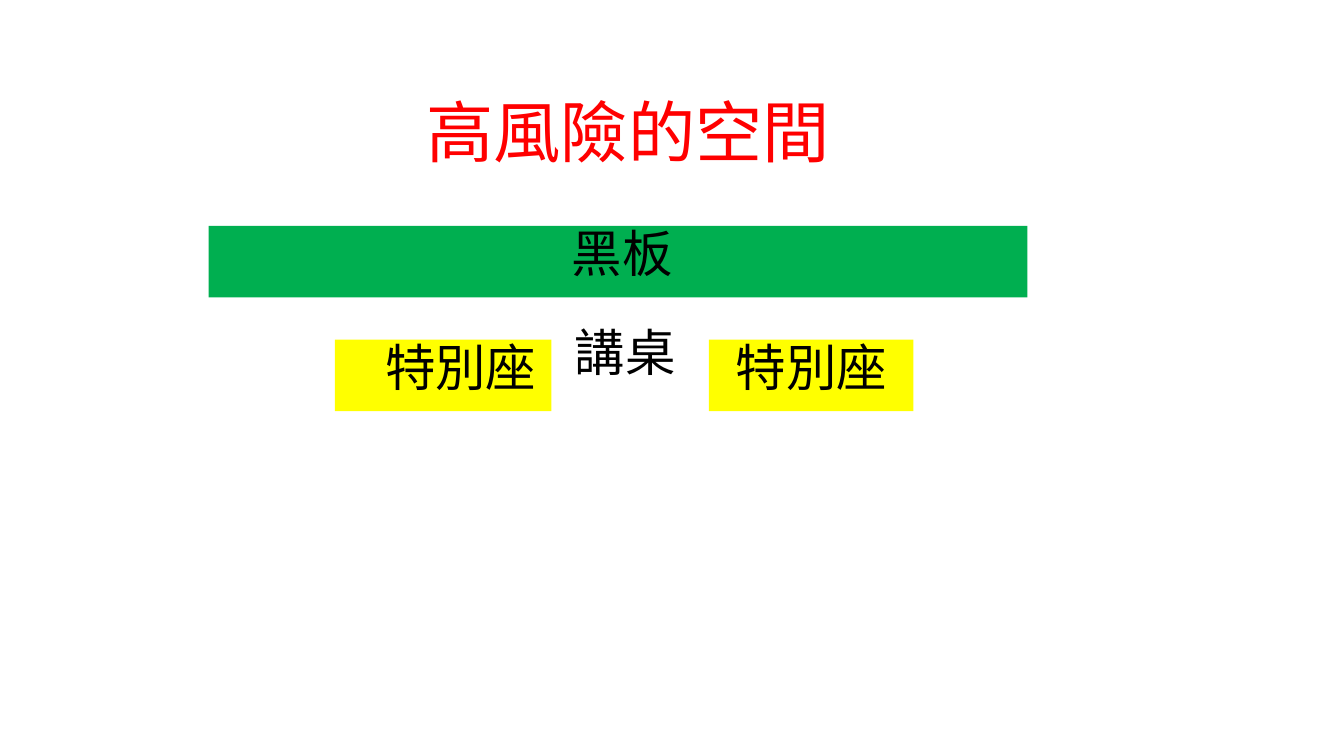
from dataclasses import dataclass
from typing import Optional

from pptx import Presentation
from pptx.dml.color import RGBColor
from pptx.enum import shapes, text
from pptx.oxml import ns
from pptx import util as u
from lxml import etree


@dataclass(frozen=True)
class Theme:
    font: str = "Noto Sans CJK JP"
    title_size: int = 48
    label_size: int = 36
    line_spacing: float = 0.9
    ink: str = "000000"
    warning: str = "FF0000"
    board: str = "00AF50"
    seat: str = "FFFF00"


@dataclass(frozen=True)
class Label:
    wording: str
    left: float
    top: float
    width: float
    height: float
    indent: float
    inset: float = 0.01
    space_before: float = 1
    fill: Optional[str] = None
    centred: bool = False
    tracking: int = 0


THEME = Theme()
SEAT_TOP, BAR_HEIGHT = 3.37, 0.71
BAR_INSET, BAR_SPACE = 0.03, 2.2

HEADING = Label("高風險的空間", 4.22, 0.98, 4.03, 0.83, 0.01)
CLASSROOM = [
    Label("黑板", 2.07, 2.24, 8.12, BAR_HEIGHT, 0.08, BAR_INSET, BAR_SPACE,
          THEME.board, centred=True, tracking=-10),
    Label("講桌", 5.69, 3.24, 1.03, 0.63, 0.01),
    Label("特別座", 3.32, SEAT_TOP, 2.15, BAR_HEIGHT, 0.5, BAR_INSET, BAR_SPACE, THEME.seat),
    Label("特別座", 7.03, SEAT_TOP, 2.03, BAR_HEIGHT, 0.27, BAR_INSET, BAR_SPACE, THEME.seat),
]


def write_label(frame, label: Label, size: int, colour: str) -> None:
    frame.word_wrap = True
    frame.auto_size = text.MSO_AUTO_SIZE.SHAPE_TO_FIT_TEXT
    frame.vertical_anchor = text.MSO_ANCHOR.TOP
    frame.margin_left = frame.margin_right = frame.margin_bottom = 0
    frame.margin_top = u.Inches(label.inset)

    paragraph = frame.paragraphs[0]
    paragraph.alignment = text.PP_ALIGN.CENTER if label.centred else text.PP_ALIGN.LEFT
    paragraph.space_before = u.Pt(label.space_before)
    paragraph.line_spacing = THEME.line_spacing
    properties = paragraph._p.get_or_add_pPr()
    properties.set("marL", str(u.Inches(label.indent)))
    properties.set("indent", "0")

    run = paragraph.add_run()
    run.text = label.wording
    run.font.name = THEME.font
    run.font.size = u.Pt(size)
    run.font.color.rgb = RGBColor.from_string(colour)
    run_properties = run._r.get_or_add_rPr()
    east_asian = etree.SubElement(run_properties, ns.qn("a:ea"))
    east_asian.set("typeface", THEME.font)
    if label.tracking:
        run_properties.set("spc", str(label.tracking))


def draw_label(slide, label: Label) -> None:
    bounds = [u.Inches(n) for n in (label.left, label.top, label.width, label.height)]
    if label.fill:
        part = slide.shapes.add_shape(shapes.MSO_SHAPE.RECTANGLE, *bounds)
        part.shadow.inherit = False
        part.fill.solid()
        part.fill.fore_color.rgb = RGBColor.from_string(label.fill)
        part.line.fill.background()
    else:
        part = slide.shapes.add_textbox(*bounds)
    write_label(part.text_frame, label, THEME.label_size, THEME.ink)


def draw_heading(slide, label: Label) -> None:
    heading = slide.shapes.title
    heading.left, heading.top = u.Inches(label.left), u.Inches(label.top)
    heading.width, heading.height = u.Inches(label.width), u.Inches(label.height)
    write_label(heading.text_frame, label, THEME.title_size, THEME.warning)


def main() -> None:
    deck = Presentation()
    deck.slide_width, deck.slide_height = u.Inches(13.33), u.Inches(7.5)
    slide = deck.slides.add_slide(deck.slide_layouts[5])
    for label in CLASSROOM:
        draw_label(slide, label)
    draw_heading(slide, HEADING)
    deck.save("out.pptx")


if __name__ == "__main__":
    main()
